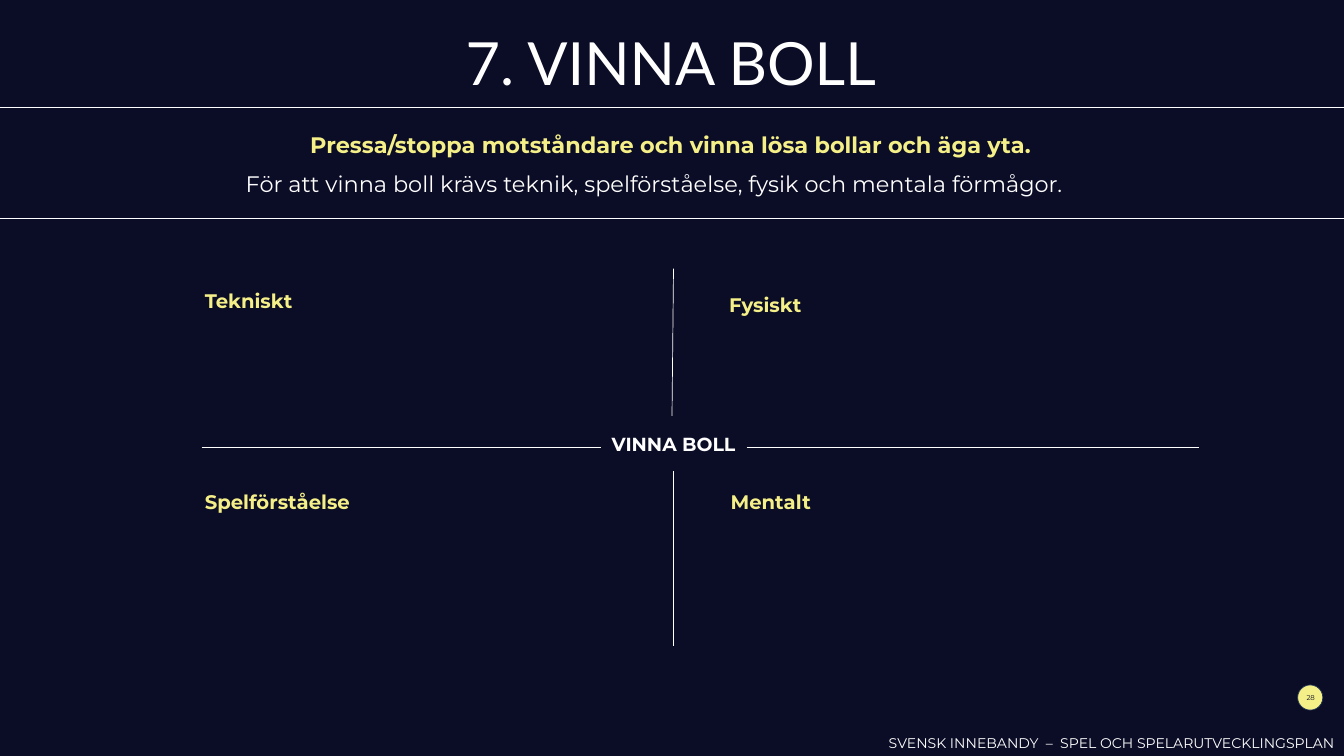
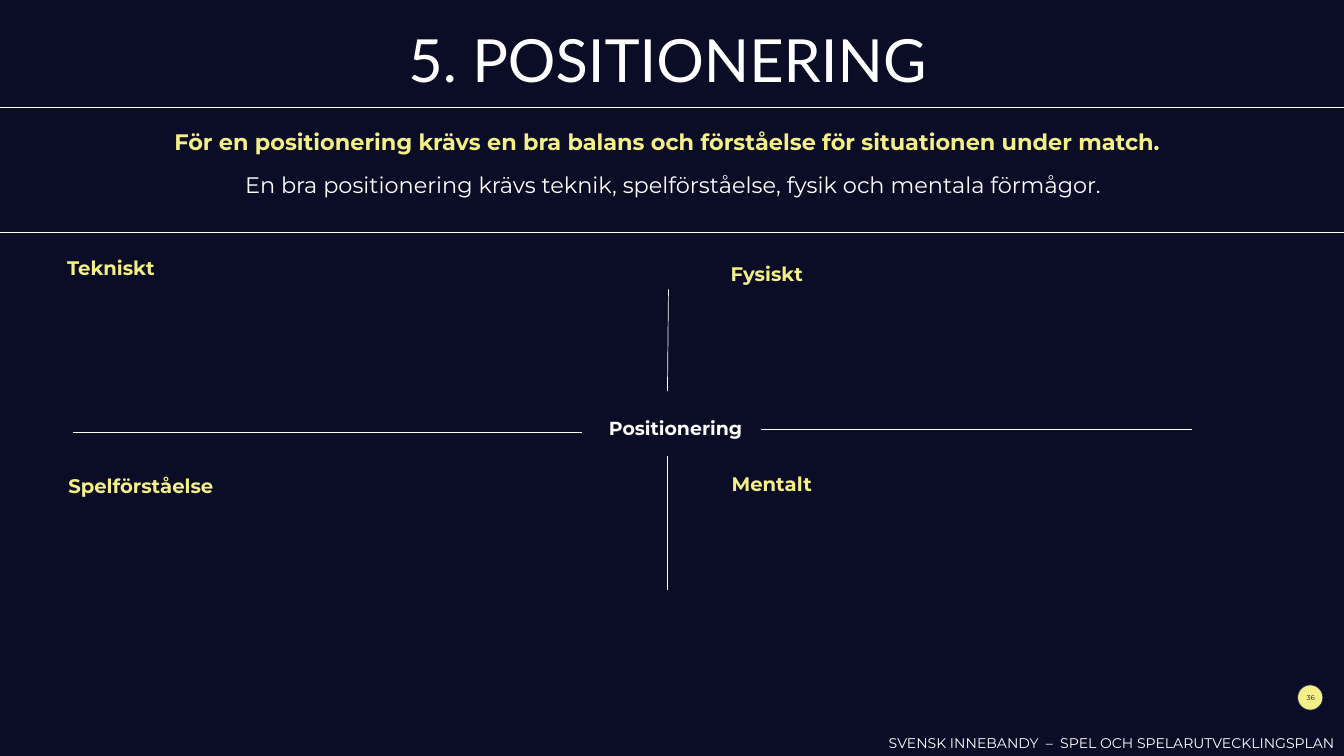
"""Build two topic slides of a floorball player development plan."""
from dataclasses import dataclass

import lxml.etree
import pptx
import pptx.dml.color
import pptx.enum.shapes
import pptx.enum.text
import pptx.oxml.ns
import pptx.util
from pptx.util import Inches

SHAPE = pptx.enum.shapes.MSO_SHAPE
ALIGN = pptx.enum.text.PP_ALIGN
ANCHOR = pptx.enum.text.MSO_ANCHOR


@dataclass(frozen=True)
class TextStyle:
    size: int
    color: str
    font: str = "Montserrat"
    bold: bool = False


class Theme:
    width, height = 26.66, 15
    navy, yellow, white, badge_edge = "0B0C26", "F5EF88", "FFFFFF", "1E3256"
    title = TextStyle(85, white, font="Lato")
    lead = TextStyle(32, yellow, bold=True)
    body = TextStyle(32, white)
    heading = TextStyle(28, yellow, bold=True)
    center = TextStyle(27, white, bold=True)
    page = TextStyle(10, navy)
    footer = TextStyle(20, white)
    lead_gap = 49
    thin, regular = 0.5, 1
    band_top = 2.13
    footer_text = "SVENSK INNEBANDY  –  SPEL OCH SPELARUTVECKLINGSPLAN"


@dataclass(frozen=True)
class Topic:
    title: str
    lead: str
    body: str
    center: str
    page: int
    title_box: tuple
    body_box: tuple
    center_box: tuple
    headings: dict
    cross_lines: tuple
    band_bottom: float


TOPICS = (
    Topic(
        title="7. VINNA BOLL",
        lead="Pressa/stoppa motståndare och vinna lösa bollar och äga yta.",
        body="För att vinna boll krävs teknik, spelförståelse, fysik och mentala förmågor.",
        center="VINNA BOLL",
        page=28,
        title_box=(4.75, 0.46, 17.11, 3.42),
        body_box=(4, 3.33, 17.96, 0.64),
        center_box=(10.84, 7.34, 5.04, 2.95),
        headings={
            "Spelförståelse": (3.81, 9.51, 8.95, 3.16),
            "Tekniskt": (3.81, 5.52, 8.95, 3.16),
            "Fysiskt": (14.21, 5.6, 10.01, 3.16),
            "Mentalt": (14.24, 9.51, 9.54, 3.16),
        },
        cross_lines=(
            (4, 8.88, 11.92, 8.88),
            (13.36, 5.33, 13.33, 8.25),
            (14.81, 8.88, 23.78, 8.88),
            (13.36, 9.35, 13.36, 12.81),
        ),
        band_bottom=4.33,
    ),
    Topic(
        title="5. POSITIONERING",
        lead="För en positionering krävs en bra balans och förståelse för situationen under match.",
        body="En bra positionering krävs teknik, spelförståelse, fysik och mentala förmågor.",
        center="Positionering",
        page=36,
        title_box=(0.67, 0.4, 25.14, 2.74),
        body_box=(3.38, 3.34, 19.95, 0.64),
        center_box=(10.88, 7.02, 5.04, 2.95),
        headings={
            "Spelförståelse": (1.08, 9.17, 11.19, 3.62),
            "Tekniskt": (1.08, 4.88, 12.17, 3.16),
            "Fysiskt": (14.24, 5, 9.99, 3.16),
            "Mentalt": (14.26, 9.17, 9.88, 3.16),
        },
        cross_lines=(
            (1.44, 8.57, 11.55, 8.57),
            (13.26, 5.74, 13.24, 7.76),
            (15.09, 8.51, 23.64, 8.51),
            (13.24, 9.05, 13.24, 11.71),
        ),
        band_bottom=4.61,
    ),
)


def rgb(color):
    """Return the colour object for a hex string."""
    return pptx.dml.color.RGBColor.from_string(color)


def write_text(shape, lines, alignment=ALIGN.LEFT, anchor=ANCHOR.TOP, gap=0):
    """Write one paragraph for each (text, style) pair, with a gap between them."""
    frame = shape.text_frame
    frame.word_wrap = True
    frame.vertical_anchor = anchor
    for index, (text, style) in enumerate(lines):
        paragraph = frame.add_paragraph() if index else frame.paragraphs[0]
        paragraph.alignment = alignment
        if index:
            paragraph.space_before = pptx.util.Pt(gap)
        run = paragraph.add_run()
        run.text = text
        run.font.name = style.font
        run.font.size = pptx.util.Pt(style.size)
        run.font.bold = style.bold
        run.font.color.rgb = rgb(style.color)


def add_text(slide, box, lines, **layout):
    """Add a text box."""
    write_text(slide.shapes.add_textbox(*map(Inches, box)), lines, **layout)


def add_panel(slide, box, text, style, **layout):
    """Add an unfilled rounded rectangle that holds one line of text."""
    panel = slide.shapes.add_shape(SHAPE.ROUNDED_RECTANGLE, *map(Inches, box))
    panel.shadow.inherit = False
    panel.fill.background()
    panel.line.fill.background()
    write_text(panel, [(text, style)], **layout)


def add_line(slide, ends, weight):
    """Add a white straight line without shadow."""
    line = slide.shapes.add_connector(
        pptx.enum.shapes.MSO_CONNECTOR.STRAIGHT, *map(Inches, ends))
    line.line.color.rgb = rgb(Theme.white)
    line.line.width = pptx.util.Pt(weight)
    lxml.etree.SubElement(line._element.spPr, pptx.oxml.ns.qn("a:effectLst"))


def add_badge(slide):
    """Add the round badge behind the page number."""
    badge = slide.shapes.add_shape(SHAPE.OVAL, *map(Inches, (25.74, 13.59, 0.5, 0.5)))
    badge.shadow.inherit = False
    badge.fill.solid()
    badge.fill.fore_color.rgb = rgb(Theme.yellow)
    badge.line.color.rgb = rgb(Theme.badge_edge)
    badge.line.width = pptx.util.Pt(Theme.regular)


def add_footer(slide, page):
    """Add the page number and the footer text."""
    add_text(slide, (25.2, 13.45, 1.6, 0.8), [(str(page), Theme.page)],
             alignment=ALIGN.CENTER, anchor=ANCHOR.MIDDLE)
    add_text(slide, (17.53, 14.52, 9.49, 0.45), [(Theme.footer_text, Theme.footer)])


def add_header(slide, topic):
    """Add the title, the lead and the sentence in the band."""
    add_text(slide, topic.title_box,
             [(topic.title, Theme.title), (topic.lead, Theme.lead)],
             alignment=ALIGN.CENTER, gap=Theme.lead_gap)
    add_text(slide, topic.body_box, [(topic.body, Theme.body)], alignment=ALIGN.CENTER)
    for height in (Theme.band_top, topic.band_bottom):
        add_line(slide, (0, height, Theme.width, height), Theme.thin)


def add_cross(slide, topic):
    """Add the four headings around the topic name and the lines between them."""
    for text, box in topic.headings.items():
        add_panel(slide, box, text, Theme.heading)
    add_panel(slide, topic.center_box, topic.center, Theme.center,
              alignment=ALIGN.CENTER, anchor=ANCHOR.MIDDLE)
    for ends in topic.cross_lines:
        is_horizontal = ends[1] == ends[3]
        add_line(slide, ends, Theme.thin if is_horizontal else Theme.regular)


def main():
    """Build and save the presentation."""
    presentation = pptx.Presentation()
    presentation.slide_width = Inches(Theme.width)
    presentation.slide_height = Inches(Theme.height)
    background = presentation.slide_master.background.fill
    background.solid()
    background.fore_color.rgb = rgb(Theme.navy)
    for topic in TOPICS:
        slide = presentation.slides.add_slide(presentation.slide_layouts[6])
        add_badge(slide)
        add_header(slide, topic)
        add_cross(slide, topic)
        add_footer(slide, topic.page)
    presentation.save("out.pptx")


if __name__ == "__main__":
    main()
